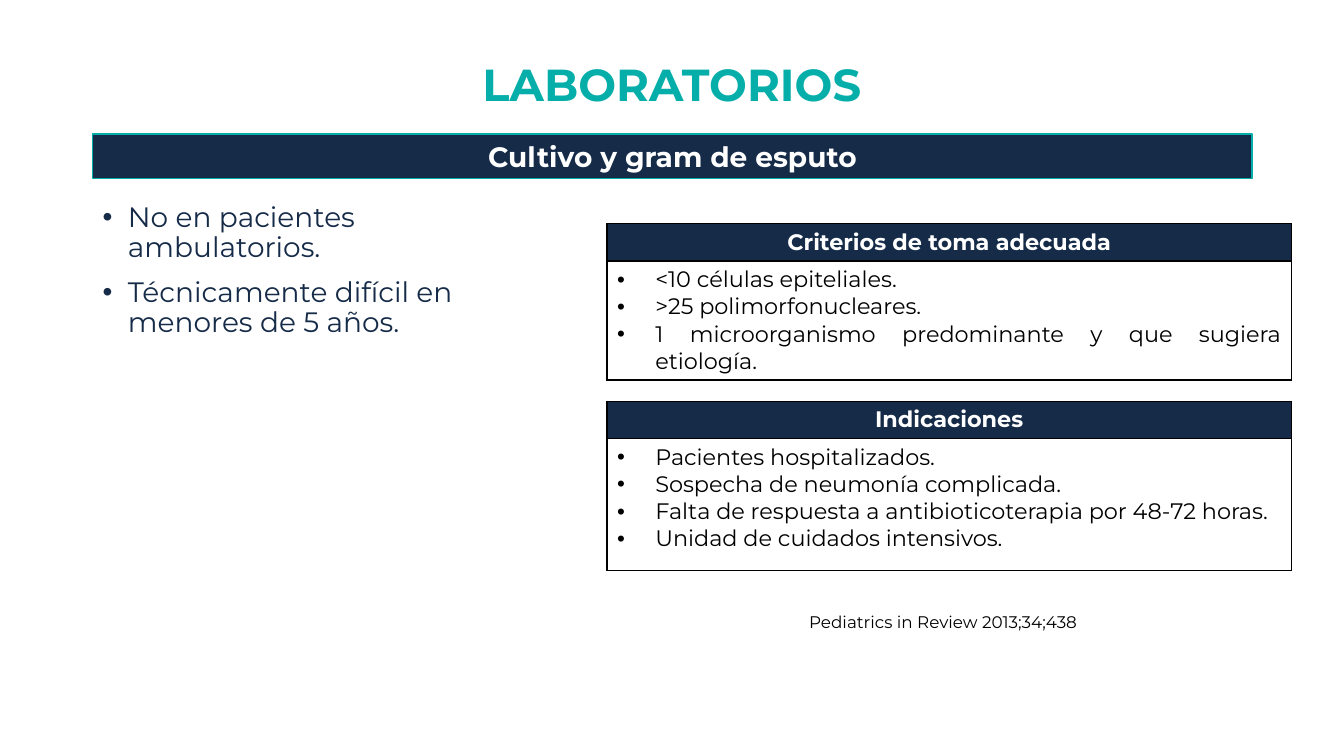
import pptx
import pptx.util
import pptx.dml.color
import pptx.enum.shapes
import pptx.enum.text
import pptx.oxml
import pptx.oxml.ns
from dataclasses import dataclass

Inches = pptx.util.Inches
Pt = pptx.util.Pt
ALIGN = pptx.enum.text.PP_ALIGN
ANCHOR = pptx.enum.text.MSO_ANCHOR


@dataclass(frozen=True)
class Theme:
    font: str = "Montserrat"
    teal: str = "06AEAA"
    navy: str = "152B48"
    white: str = "FFFFFF"
    black: str = "000000"
    title: int = 32
    body: int = 20
    table: int = 16
    source: int = 12


THEME = Theme()


def rgb(color):
    return pptx.dml.color.RGBColor.from_string(color)


def add_bullet(p, indent):
    pPr = p._p.get_or_add_pPr()
    pPr.set("marL", str(Inches(indent)))
    pPr.set("indent", str(-Inches(indent)))
    ns = pptx.oxml.ns.nsdecls("a")
    pPr.append(pptx.oxml.parse_xml(f'<a:buFont {ns} typeface="Arial"/>'))
    pPr.append(pptx.oxml.parse_xml(f'<a:buChar {ns} char="•"/>'))


def write(tf, *lines, size, color, bold=False, align=ALIGN.LEFT,
          bullet=None, spacing=None, before=0):
    """Write one paragraph per line; bullet is the hanging indent in inches."""
    tf.word_wrap = True
    for i, line in enumerate(lines):
        p = tf.add_paragraph() if i else tf.paragraphs[0]
        if bullet:
            add_bullet(p, bullet)
        p.alignment = align
        if spacing:
            p.line_spacing = spacing
        if i and before:
            p.space_before = Pt(before)
        r = p.add_run()
        r.text = line
        r.font.name = THEME.font
        r.font.size = Pt(size)
        r.font.bold = bold
        r.font.color.rgb = rgb(color)


def add_text(slide, box, *lines, anchor=ANCHOR.TOP, **fmt):
    tf = slide.shapes.add_textbox(*map(Inches, box)).text_frame
    tf.vertical_anchor = anchor
    write(tf, *lines, **fmt)


def add_banner(slide, box, text):
    sp = slide.shapes.add_shape(pptx.enum.shapes.MSO_SHAPE.RECTANGLE, *map(Inches, box))
    sp.shadow.inherit = False
    sp.fill.solid()
    sp.fill.fore_color.rgb = rgb(THEME.navy)
    sp.line.color.rgb = rgb(THEME.teal)
    sp.line.width = Pt(1)
    sp.text_frame.vertical_anchor = ANCHOR.MIDDLE
    write(sp.text_frame, text, size=THEME.body, color=THEME.white, bold=True,
          align=ALIGN.CENTER)


def add_borders(cell):
    tcPr = cell._tc.get_or_add_tcPr()
    for side in "LRTB":
        tcPr.append(pptx.oxml.parse_xml(
            f'<a:ln{side} {pptx.oxml.ns.nsdecls("a")} w="{Pt(1)}"><a:solidFill>'
            f'<a:srgbClr val="{THEME.black}"/></a:solidFill></a:ln{side}>'))


def add_list_table(slide, box, heading, items):
    """Place a one-column table: a dark heading row over a bulleted list."""
    header_height = 0.37
    table = slide.shapes.add_table(2, 1, *map(Inches, box)).table
    table.first_row = table.horz_banding = False
    table.rows[0].height = Inches(header_height)
    table.rows[1].height = Inches(box[3] - header_height)
    head, body = table.cell(0, 0), table.cell(1, 0)
    for cell in (head, body):
        add_borders(cell)
    head.fill.solid()
    head.fill.fore_color.rgb = rgb(THEME.navy)
    body.fill.background()
    write(head.text_frame, heading, size=THEME.table, color=THEME.white, bold=True,
          align=ALIGN.CENTER)
    write(body.text_frame, *items, size=THEME.table, color=THEME.black,
          align=ALIGN.JUSTIFY, bullet=0.38)


def build_lab_slide(prs):
    slide = prs.slides.add_slide(prs.slide_layouts[6])
    left, table_left, table_width = 0.92, 6.02, 6.79
    add_text(slide, (3.86, 0.4, 5.61, 0.93), "LABORATORIOS", anchor=ANCHOR.MIDDLE,
             size=THEME.title, color=THEME.teal, bold=True, align=ALIGN.CENTER, spacing=0.9)
    add_banner(slide, (left, 1.33, 11.5, 0.44), "Cultivo y gram de esputo")
    add_text(slide, (left, 1.97, 4.19, 2.16),
             "No en pacientes ambulatorios.",
             "Técnicamente difícil en menores de 5 años.",
             size=THEME.body, color=THEME.navy, bullet=0.25, spacing=0.9, before=10)
    add_list_table(slide, (table_left, 2.22, table_width, 1.55), "Criterios de toma adecuada", (
        "<10 células epiteliales.",
        ">25 polimorfonucleares.",
        "1 microorganismo predominante y que sugiera etiología."))
    add_list_table(slide, (table_left, 3.98, table_width, 1.68), "Indicaciones", (
        "Pacientes hospitalizados.",
        "Sospecha de neumonía complicada.",
        "Falta de respuesta a antibioticoterapia por 48-72 horas.",
        "Unidad de cuidados intensivos."))
    add_text(slide, (table_left, 6.02, 6.67, 0.3), "Pediatrics in Review 2013;34;438",
             size=THEME.source, color=THEME.black, align=ALIGN.CENTER)


def main():
    prs = pptx.Presentation()
    prs.slide_width, prs.slide_height = Inches(13.33), Inches(7.5)
    build_lab_slide(prs)
    prs.save("out.pptx")


if __name__ == "__main__":
    main()
